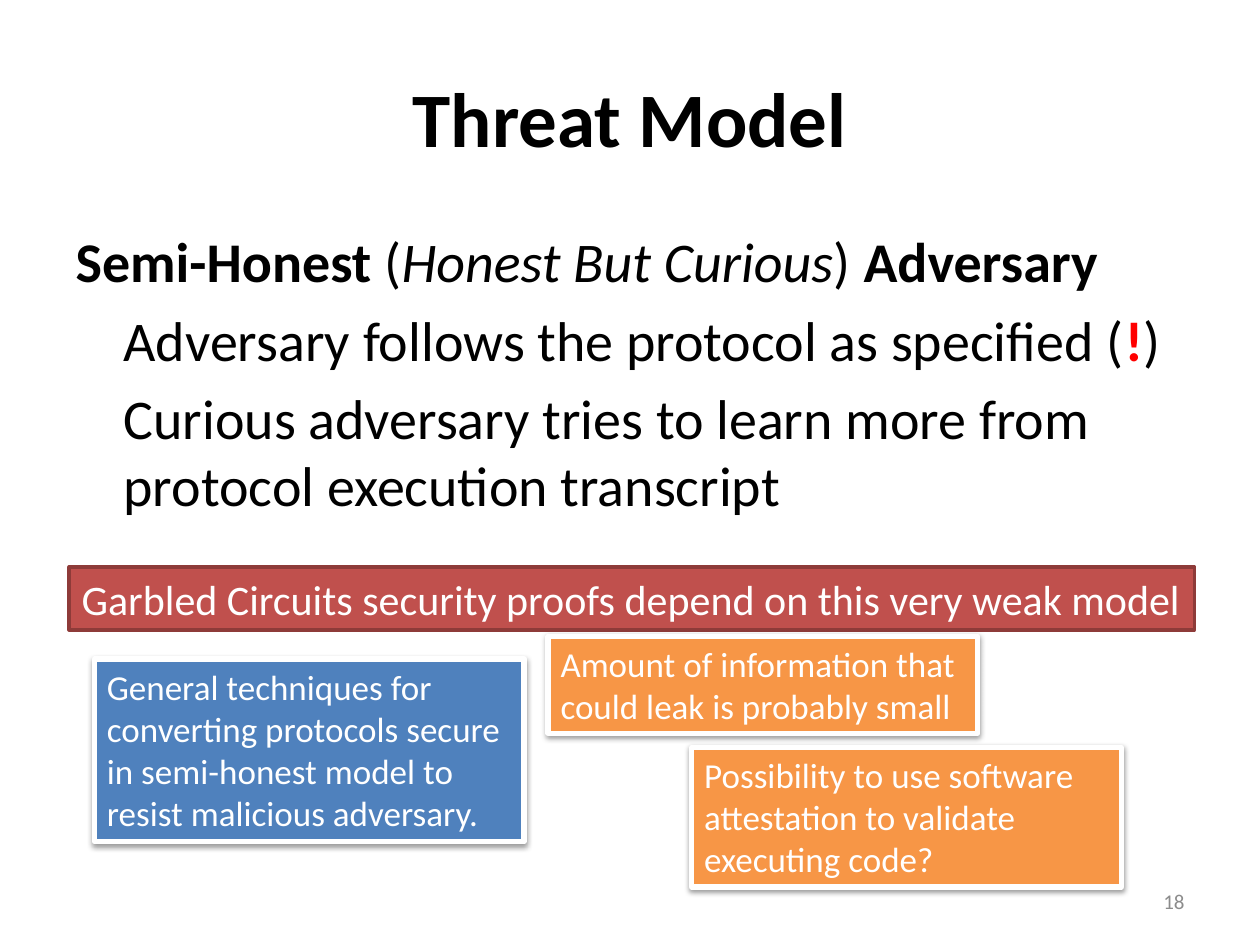
"""Build the Threat Model slide."""
from dataclasses import dataclass

from lxml import etree
from pptx import Presentation
from pptx.dml.color import RGBColor
from pptx.enum.shapes import MSO_SHAPE
from pptx.enum.text import MSO_ANCHOR, MSO_AUTO_SIZE, PP_ALIGN
from pptx.oxml.ns import qn
from pptx.util import Inches, Pt

RECTANGLE = MSO_SHAPE.RECTANGLE
TOP, MIDDLE = MSO_ANCHOR.TOP, MSO_ANCHOR.MIDDLE
LEFT, CENTER, RIGHT = PP_ALIGN.LEFT, PP_ALIGN.CENTER, PP_ALIGN.RIGHT
NO_AUTOFIT, GROW = MSO_AUTO_SIZE.NONE, MSO_AUTO_SIZE.SHAPE_TO_FIT_TEXT


@dataclass(frozen=True)
class Theme:
    """Colours, font and type sizes of the slide."""
    font: str = "Calibri"
    black: str = "000000"
    white: str = "FFFFFF"
    alert: str = "FF0000"
    muted: str = "8C8C8C"
    red: str = "C0504D"
    dark_red: str = "8E3B39"
    blue: str = "4F81BD"
    orange: str = "F79646"
    title: int = 44
    body: int = 32
    banner: int = 24
    note: int = 20
    page: int = 12


@dataclass(frozen=True)
class Span:
    """A stretch of body text with its emphasis."""
    text: str
    bold: bool = False
    italic: bool = False
    color: str | None = None


@dataclass(frozen=True)
class Callout:
    """A filled box with one statement."""
    text: str
    box: tuple[float, float, float, float]
    fill: str
    line: str
    line_width: float
    size: int
    wrap: bool = True
    shadow: bool = True


THEME = Theme()
NOTE_WIDTH = 3.41
INDENT = 0.38

BODY = [
    [Span("Semi-Honest ", bold=True), Span("("), Span("Honest But Curious", italic=True),
     Span(") "), Span("Adversary", bold=True)],
    [Span("Adversary follows the protocol as specified ("),
     Span("!", bold=True, color=THEME.alert), Span(")")],
    [Span("Curious adversary tries to learn more from protocol execution transcript")],
]


def note(text: str, left: float, top: float, height: float, fill: str) -> Callout:
    """Describe a white-framed note."""
    return Callout(text, (left, top, NOTE_WIDTH, height), fill, THEME.white, 3, THEME.note)


CALLOUTS = [
    Callout("Garbled Circuits security proofs depend on this very weak model",
            (0.55, 4.5, 8.93, 0.5), THEME.red, THEME.dark_red, 2, THEME.banner,
            wrap=False, shadow=False),
    note("General techniques for converting protocols secure in semi-honest model "
         "to resist malicious adversary.", 0.75, 5.23, 1.45, THEME.blue),
    note("Possibility to use software attestation to validate executing code?",
         5.49, 5.93, 1.11, THEME.orange),
    note("Amount of information that could leak is probably small",
         4.35, 5.05, 0.77, THEME.orange),
]


def place(shape, left: float, top: float, width: float, height: float) -> None:
    """Set position and size in inches."""
    shape.left, shape.top = Inches(left), Inches(top)
    shape.width, shape.height = Inches(width), Inches(height)


def style(paragraph, size: int, color: str, align: PP_ALIGN = LEFT) -> None:
    """Format a whole paragraph."""
    paragraph.alignment = align
    paragraph.font.name = THEME.font
    paragraph.font.size = Pt(size)
    paragraph.font.color.rgb = RGBColor.from_string(color)


def add_title(slide, text: str) -> None:
    """Fill the title placeholder."""
    title = slide.shapes.title
    place(title, 0.5, 0.3, 9, 1.25)
    frame = title.text_frame
    frame.text = text
    frame.auto_size = NO_AUTOFIT
    frame.vertical_anchor = MIDDLE
    style(frame.paragraphs[0], THEME.title, THEME.black, CENTER)
    frame.paragraphs[0].font.bold = True


def add_body(slide, statements: list[list[Span]]) -> None:
    """Fill the body placeholder with a lead line and indented statements."""
    body = slide.placeholders[1]
    place(body, 0.5, 1.75, 9, 4.95)
    frame = body.text_frame
    frame.auto_size = NO_AUTOFIT
    for index, spans in enumerate(statements):
        paragraph = frame.add_paragraph() if index else frame.paragraphs[0]
        style(paragraph, THEME.body, THEME.black)
        properties = paragraph._p.get_or_add_pPr()
        properties.set("marL", str(Inches(INDENT)))
        properties.set("indent", str(0 if index else -Inches(INDENT)))
        properties.insert(0, etree.Element(qn("a:buNone")))
        for span in spans:
            run = paragraph.add_run()
            run.text = span.text
            if span.bold:
                run.font.bold = True
            if span.italic:
                run.font.italic = True
            if span.color:
                run.font.color.rgb = RGBColor.from_string(span.color)


def add_shadow(shape) -> None:
    """Give a shape a soft shadow below."""
    effects = shape._element.spPr.find(qn("a:effectLst"))
    shadow = etree.SubElement(effects, qn("a:outerShdw"), blurRad=str(Pt(3.1)),
                              dist=str(Pt(1.6)), dir="5400000", rotWithShape="0")
    color = etree.SubElement(shadow, qn("a:srgbClr"), val=THEME.black)
    etree.SubElement(color, qn("a:alpha"), val="38000")


def add_callout(slide, callout: Callout) -> None:
    """Draw one filled statement box."""
    box = slide.shapes.add_shape(RECTANGLE, *map(Inches, callout.box))
    box.fill.solid()
    box.fill.fore_color.rgb = RGBColor.from_string(callout.fill)
    box.line.color.rgb = RGBColor.from_string(callout.line)
    box.line.width = Pt(callout.line_width)
    box.shadow.inherit = False
    if callout.shadow:
        add_shadow(box)
    frame = box.text_frame
    frame.text = callout.text
    frame.word_wrap = callout.wrap
    frame.auto_size = GROW
    frame.vertical_anchor = TOP
    style(frame.paragraphs[0], callout.size, THEME.white)


def add_page_number(slide, number: str) -> None:
    """Write the page number at the lower right."""
    frame = slide.shapes.add_textbox(*map(Inches, (7.17, 6.95, 2.33, 0.4))).text_frame
    frame.text = number
    frame.word_wrap = True
    frame.vertical_anchor = MIDDLE
    style(frame.paragraphs[0], THEME.page, THEME.muted, RIGHT)


def main() -> None:
    """Build and save the slide."""
    deck = Presentation()
    deck.slide_width, deck.slide_height = Inches(10), Inches(7.5)
    slide = deck.slides.add_slide(deck.slide_layouts[1])
    add_title(slide, "Threat Model")
    add_body(slide, BODY)
    add_page_number(slide, "18")
    for callout in CALLOUTS:
        add_callout(slide, callout)
    deck.save("out.pptx")


if __name__ == "__main__":
    main()
